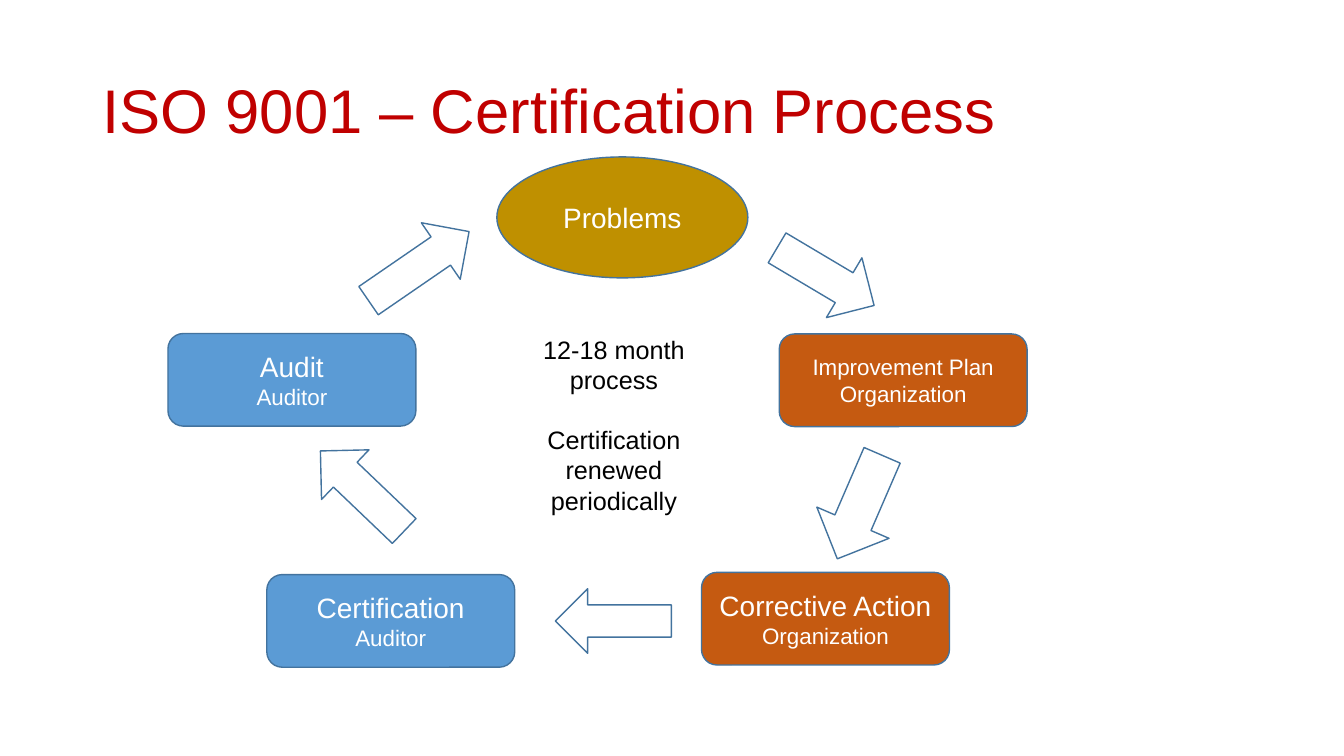
from dataclasses import dataclass

import pptx
import pptx.dml.color
import pptx.enum.shapes
import pptx.enum.text
import pptx.util

Pt = pptx.util.Pt
RGBColor = pptx.dml.color.RGBColor
Shape = pptx.enum.shapes.MSO_SHAPE
Align = pptx.enum.text.PP_ALIGN
Anchor = pptx.enum.text.MSO_ANCHOR

FONT = "Arial"
RED = RGBColor(0xC0, 0x00, 0x00)
BLUE = RGBColor(0x5B, 0x9B, 0xD5)
GOLD = RGBColor(0xBF, 0x90, 0x00)
ORANGE = RGBColor(0xC5, 0x5A, 0x11)
OUTLINE = RGBColor(0x43, 0x73, 0x9E)
WHITE = RGBColor(0xFF, 0xFF, 0xFF)
BLACK = RGBColor(0x00, 0x00, 0x00)


@dataclass(frozen=True)
class Line:
    text: str
    size: float
    space_before: float = 0


@dataclass(frozen=True)
class Step:
    left: float
    top: float
    fill: RGBColor
    lines: tuple[Line, ...]
    kind: Shape = Shape.ROUNDED_RECTANGLE
    width: float = 177.1
    height: float = 66.2


@dataclass(frozen=True)
class Arrow:
    left: float
    top: float
    width: float
    height: float
    rotation: float


STEPS = (
    Step(354.9, 112.1, GOLD, (Line("Problems", 20),), Shape.OVAL, 179.3, 86.4),
    Step(556.6, 238.5, ORANGE, (Line("Improvement Plan", 16), Line("Organization", 16))),
    Step(501.1, 408.8, ORANGE, (Line("Corrective Action", 20), Line("Organization", 16))),
    Step(190.6, 410.4, BLUE, (Line("Certification", 20), Line("Auditor", 16))),
    Step(120, 238.2, BLUE, (Line("Audit", 20), Line("Auditor", 16))),
)

ARROWS = (
    Arrow(549.4, 172.8, 80.6, 49.7, 30.7),
    Arrow(573.8, 334.1, 80.6, 56.2, 113.4),
    Arrow(396.7, 420.5, 82.8, 46.1, 180),
    Arrow(217.4, 326.2, 82.8, 49, 223.7),
    Arrow(255.6, 165.6, 87.1, 49, 325.5),
)

DURATION_NOTE = (
    Line("12-18 month process", 18),
    Line("Certification renewed periodically", 18, 21),
)


def write_lines(text_frame, lines: tuple[Line, ...], color: RGBColor) -> None:
    text_frame.word_wrap = True
    for index, line in enumerate(lines):
        paragraph = text_frame.add_paragraph() if index else text_frame.paragraphs[0]
        paragraph.text = line.text
        paragraph.alignment = Align.CENTER
        paragraph.space_before = Pt(line.space_before)
        paragraph.font.name = FONT
        paragraph.font.size = Pt(line.size)
        paragraph.font.color.rgb = color


def outline(shape) -> None:
    shape.shadow.inherit = False
    shape.line.color.rgb = OUTLINE
    shape.line.width = Pt(1)


def add_title(slide, text: str) -> None:
    title = slide.shapes.title
    title.left, title.top, title.width, title.height = Pt(66), Pt(28.8), Pt(828), Pt(104.4)
    title.text_frame.text = text
    title.text_frame.vertical_anchor = Anchor.MIDDLE
    paragraph = title.text_frame.paragraphs[0]
    paragraph.alignment = Align.LEFT
    paragraph.line_spacing = 0.9
    paragraph.font.name = FONT
    paragraph.font.size = Pt(44)
    paragraph.font.color.rgb = RED


def add_step(slide, step: Step) -> None:
    shape = slide.shapes.add_shape(
        step.kind, Pt(step.left), Pt(step.top), Pt(step.width), Pt(step.height)
    )
    outline(shape)
    shape.fill.solid()
    shape.fill.fore_color.rgb = step.fill
    shape.text_frame.vertical_anchor = Anchor.MIDDLE
    write_lines(shape.text_frame, step.lines, WHITE)


def add_arrow(slide, arrow: Arrow) -> None:
    shape = slide.shapes.add_shape(
        Shape.RIGHT_ARROW, Pt(arrow.left), Pt(arrow.top), Pt(arrow.width), Pt(arrow.height)
    )
    outline(shape)
    shape.fill.background()
    shape.rotation = arrow.rotation


def main() -> None:
    presentation = pptx.Presentation()
    presentation.slide_width, presentation.slide_height = Pt(960), Pt(540)
    slide = presentation.slides.add_slide(presentation.slide_layouts.get_by_name("Title Only"))
    add_title(slide, "ISO 9001 – Certification Process")
    for step in STEPS:
        add_step(slide, step)
    for arrow in ARROWS:
        add_arrow(slide, arrow)
    note = slide.shapes.add_textbox(Pt(355), Pt(235.4), Pt(167), Pt(138.2))
    write_lines(note.text_frame, DURATION_NOTE, BLACK)
    presentation.save("out.pptx")


if __name__ == "__main__":
    main()
